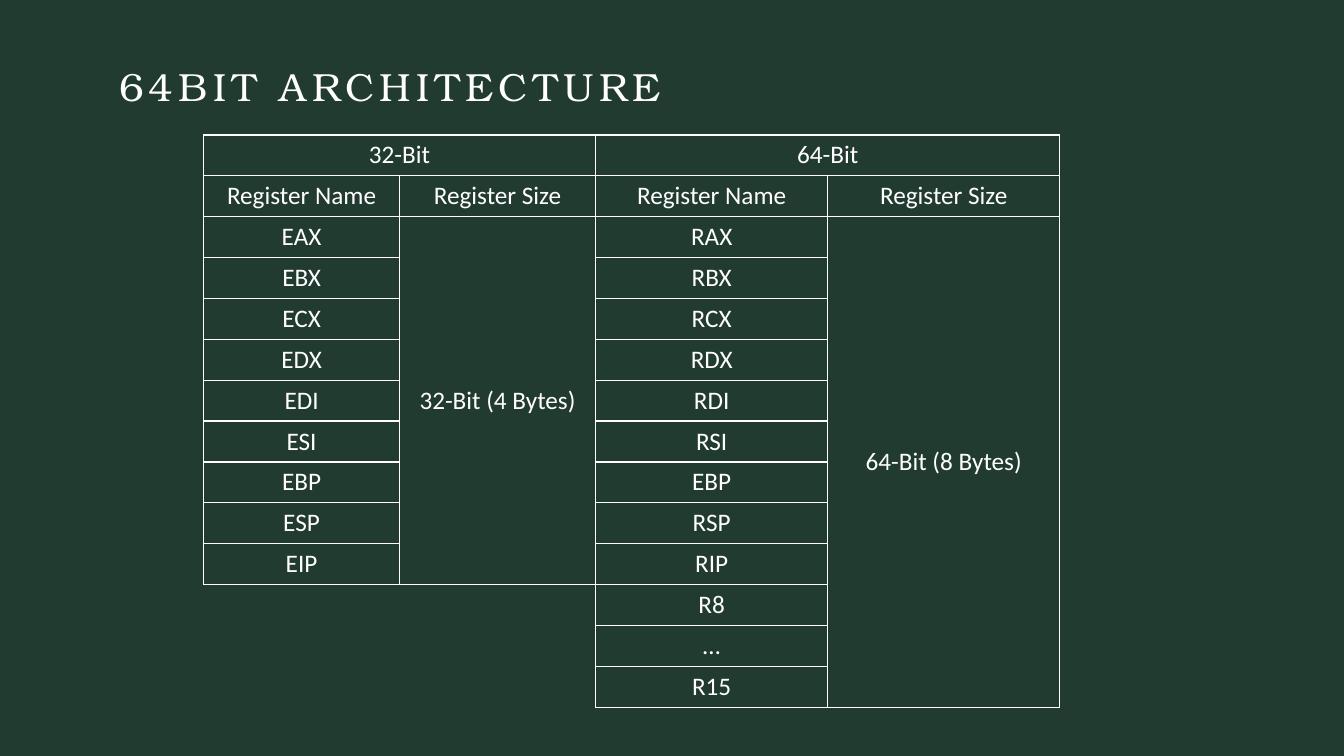
"""Build a slide comparing 32-bit and 64-bit registers."""
from lxml import etree
from pptx import Presentation, util as u
from pptx.dml.color import RGBColor
from pptx.enum import text
from pptx.oxml import ns

WHITE, GREEN = "FFFFFF", "223B31"
NARROW = "EAX EBX ECX EDX EDI ESI EBP ESP EIP".split()
WIDE = "RAX RBX RCX RDX RDI RSI EBP RSP RIP R8 … R15".split()
HEADINGS = ["Register Name", "Register Size"] * 2
COLUMN_WIDTHS = [4.94, 4.94, 5.85, 5.85]
HEADER_ROWS = 2
ROW_HEIGHT = 1.03


def colour(value):
    """Turn a hex string into a colour."""
    return RGBColor.from_string(value)


def style_text(frame, font, size, align):
    """Format every paragraph and run of a text frame."""
    for para in frame.paragraphs:
        para.alignment = align
        for span in para.runs:
            span.font.name = font
            span.font.size = u.Pt(size)
            span.font.bold = False
            span.font.color.rgb = colour(WHITE)


def add_title(page, wording):
    """Place and format the title with wide letter spacing."""
    box = page.shapes.title
    box.left, box.top, box.width, box.height = map(u.Cm, (3, 1.57, 27.86, 1.83))
    frame = box.text_frame
    frame.text = wording
    frame.word_wrap = True
    frame.auto_size = text.MSO_AUTO_SIZE.NONE
    frame.vertical_anchor = text.MSO_ANCHOR.TOP
    frame.margin_left = frame.margin_right = frame.margin_top = frame.margin_bottom = 0
    style_text(frame, "TeX Gyre Bonum", 28, text.PP_ALIGN.LEFT)
    frame.paragraphs[0].runs[0].font._element.set("spc", "400")


def set_borders(cell, sides):
    """Draw white borders on the given sides and clear the others."""
    properties = cell._tc.get_or_add_tcPr()
    for index, side in enumerate("LRTB"):
        line = etree.Element(ns.qn(f"a:ln{side}"), w=str(u.Pt(1)))
        if side in sides:
            fill = etree.SubElement(line, ns.qn("a:solidFill"))
            etree.SubElement(fill, ns.qn("a:srgbClr"), val=WHITE)
        else:
            etree.SubElement(line, ns.qn("a:noFill"))
        properties.insert(index, line)


def borders_at(row, column):
    """Choose borders, leaving the area under the short list open."""
    first_open = HEADER_ROWS + len(NARROW)
    if column > 1 or row < first_open:
        return "LRTB"
    return ("T" if row == first_open else "") + ("R" if column == 1 else "")


def fill_table(table):
    """Write headings, register names and sizes, merging shared cells."""
    for column, heading in enumerate(HEADINGS):
        table.cell(1, column).text = heading
    for column, bits, names in ((0, 32, NARROW), (2, 64, WIDE)):
        header = table.cell(0, column)
        header.merge(table.cell(0, column + 1))
        header.text = f"{bits}-Bit"
        for row, name in enumerate(names, HEADER_ROWS):
            table.cell(row, column).text = name
        size = table.cell(HEADER_ROWS, column + 1)
        size.merge(table.cell(HEADER_ROWS + len(names) - 1, column + 1))
        size.text = f"{bits}-Bit ({bits // 8} Bytes)"
        size.vertical_anchor = text.MSO_ANCHOR.MIDDLE


def add_register_table(page):
    """Add the register table with its grid."""
    rows = HEADER_ROWS + len(WIDE)
    table = page.shapes.add_table(
        rows, len(COLUMN_WIDTHS), u.Cm(5.13), u.Cm(3.4),
        u.Cm(sum(COLUMN_WIDTHS)), u.Cm(rows * ROW_HEIGHT)).table
    table.first_row = table.horz_banding = False
    for column, width in zip(table.columns, COLUMN_WIDTHS):
        column.width = u.Cm(width)
    for row in table.rows:
        row.height = u.Cm(ROW_HEIGHT)
    fill_table(table)
    for index, cell in enumerate(table.iter_cells()):
        cell.fill.background()
        set_borders(cell, borders_at(*divmod(index, len(COLUMN_WIDTHS))))
        style_text(cell.text_frame, "Calibri", 18, text.PP_ALIGN.CENTER)


def main():
    """Build and save the deck."""
    deck = Presentation()
    deck.slide_width, deck.slide_height = u.Cm(33.87), u.Cm(19.05)
    page = deck.slides.add_slide(deck.slide_layouts[5])
    page.background.fill.solid()
    page.background.fill.fore_color.rgb = colour(GREEN)
    add_title(page, "64BIT ARCHITECTURE")
    add_register_table(page)
    deck.save("out.pptx")


if __name__ == "__main__":
    main()
